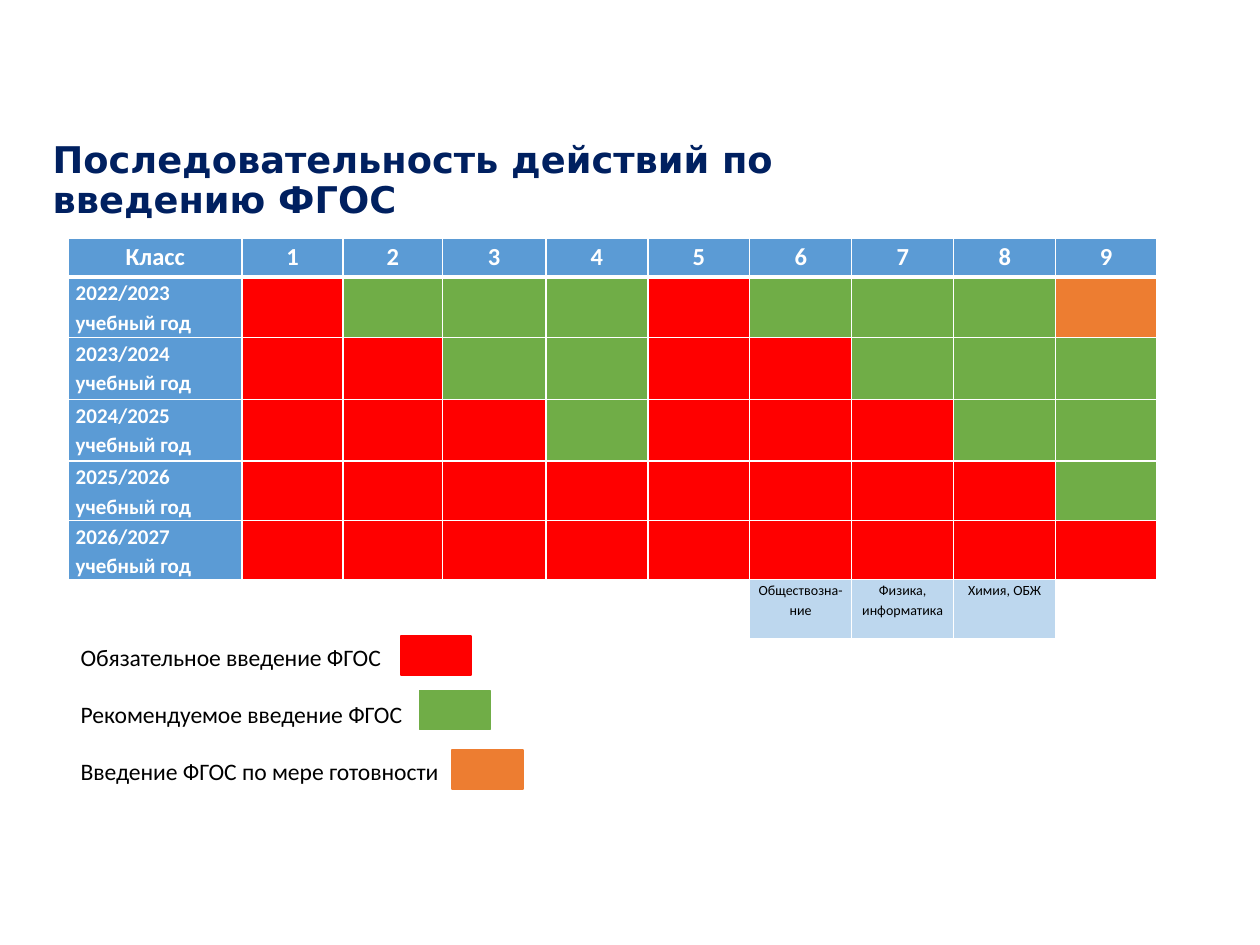
from dataclasses import dataclass

from lxml import etree
from pptx import Presentation
from pptx.dml.color import RGBColor
from pptx.enum import shapes, text
from pptx.oxml.ns import qn
from pptx.util import Pt

NAVY = RGBColor(0x00, 0x20, 0x60)
BLUE = RGBColor(0x5B, 0x9B, 0xD5)
PALE = RGBColor(0xBD, 0xD7, 0xEE)
RED = RGBColor(0xFF, 0x00, 0x00)
GREEN = RGBColor(0x70, 0xAD, 0x47)
ORANGE = RGBColor(0xED, 0x7D, 0x31)
WHITE = RGBColor(0xFF, 0xFF, 0xFF)
BLACK = RGBColor(0x00, 0x00, 0x00)

TITLE_FONT = dict(name="DejaVu Sans", size=Pt(21), bold=True)
HEAD_FONT = dict(name="Calibri", size=Pt(14), bold=True)
YEAR_FONT = dict(name="Calibri", size=Pt(12), bold=True)
NOTE_FONT = dict(name="Calibri", size=Pt(8), bold=False)
LEGEND_FONT = dict(name="Calibri", size=Pt(13.5), bold=False)

STAGES = {"R": RED, "G": GREEN, "O": ORANGE}
COLS = [99.4, 57.6, 56.9, 59] + [58.3] * 5 + [57.6]
ROWS = [22.3, 34.6, 35.3, 35.3, 33.85, 33.85, 33.85]
CENTER, LEFT = text.PP_ALIGN.CENTER, text.PP_ALIGN.LEFT


@dataclass
class Year:
    label: str
    stages: str


@dataclass
class Legend:
    label: str
    color: RGBColor
    x: float
    y: float


YEARS = [
    Year("2022/2023 учебный год", "RGGGRGGGO"),
    Year("2023/2024 учебный год", "RRGGRRGGG"),
    Year("2024/2025 учебный год", "RRRGRRRGG"),
    Year("2025/2026 учебный год", "RRRRRRRRG"),
    Year("2026/2027 учебный год", "RRRRRRRRR"),
]
SUBJECTS = {6: "Обществозна-ние", 7: "Физика, информатика", 8: "Химия, ОБЖ"}
LEGENDS = [
    Legend("Обязательное введение ФГОС", RED, 229, 363.6),
    Legend("Рекомендуемое введение ФГОС", GREEN, 239.8, 394.6),
    Legend("Введение ФГОС по мере готовности", ORANGE, 258.5, 428.4),
]


def write(p, label: str, fmt: dict, color: RGBColor) -> None:
    r = p.add_run()
    r.text = label
    for key, value in fmt.items():
        setattr(r.font, key, value)
    r.font.color.rgb = color


def add_text(s, x: float, y: float, w: float, h: float):
    tf = s.shapes.add_textbox(Pt(x), Pt(y), Pt(w), Pt(h)).text_frame
    tf.word_wrap = True
    return tf


def add_borders(cell, top: float, bottom: float) -> None:
    tc_pr = cell._tc.get_or_add_tcPr()
    for side, width in dict(lnL=1, lnR=1, lnT=top, lnB=bottom).items():
        ln = etree.SubElement(tc_pr, qn("a:" + side), w=str(Pt(width)))
        fill = etree.SubElement(ln, qn("a:solidFill"))
        etree.SubElement(fill, qn("a:srgbClr"), val=str(WHITE))


def paint(cell, color: RGBColor) -> None:
    cell.fill.solid()
    cell.fill.fore_color.rgb = color


def label_cell(cell, label: str, fmt: dict, fill: RGBColor, color: RGBColor, align) -> None:
    paint(cell, fill)
    margins = dict(margin_left=Pt(4.3), margin_right=Pt(4.3), margin_top=0, margin_bottom=0)
    for key, value in margins.items():
        setattr(cell, key, value)
    p = cell.text_frame.paragraphs[0]
    p.alignment, p.line_spacing = align, 1.15
    write(p, label, fmt, color)


def add_schedule(s) -> None:
    tbl = s.shapes.add_table(len(ROWS), len(COLS), Pt(39), Pt(136.1),
                             Pt(sum(COLS)), Pt(sum(ROWS))).table
    tbl.first_row = tbl.horz_banding = False
    for col, width in zip(tbl.columns, COLS):
        col.width = Pt(width)
    for i, (row, height) in enumerate(zip(tbl.rows, ROWS)):
        row.height = Pt(height)
        for cell in row.cells:
            add_borders(cell, 3 if i == 1 else 1, 3 if i == 0 else 1)
            cell.fill.background()
    for j in range(len(COLS)):
        label_cell(tbl.cell(0, j), str(j or "Класс"), HEAD_FONT, BLUE, WHITE, CENTER)
    for i, year in enumerate(YEARS, 1):
        label_cell(tbl.cell(i, 0), year.label, YEAR_FONT, BLUE, WHITE, LEFT)
        for j, stage in enumerate(year.stages, 1):
            paint(tbl.cell(i, j), STAGES[stage])
    last = len(ROWS) - 1
    for j in range(5):
        paint(tbl.cell(last, j), WHITE)
    for j, subject in SUBJECTS.items():
        label_cell(tbl.cell(last, j), subject, NOTE_FONT, PALE, BLACK, CENTER)


def add_legend(s) -> None:
    tf = add_text(s, 39, 363.6, 360, 89.3)
    for i, item in enumerate(LEGENDS):
        p = tf.add_paragraph() if i else tf.paragraphs[0]
        p.space_before = Pt(16.4 if i else 0)
        write(p, item.label, LEGEND_FONT, BLACK)
        sp = s.shapes.add_shape(shapes.MSO_SHAPE.RECTANGLE, Pt(item.x), Pt(item.y),
                                Pt(40.3), Pt(22.3))
        sp.shadow.inherit = False
        sp.fill.solid()
        sp.fill.fore_color.rgb = item.color
        sp.line.color.rgb = item.color
        sp.line.width = Pt(1)


def main() -> None:
    prs = Presentation()
    prs.slide_width, prs.slide_height = Pt(720), Pt(540)
    s = prs.slides.add_slide(prs.slide_layouts[6])
    tf = add_text(s, 23, 89.3, 545.8, 28.8)
    tf.vertical_anchor = text.MSO_ANCHOR.MIDDLE
    p = tf.paragraphs[0]
    p.line_spacing = 0.9
    write(p, "Последовательность действий по введению ФГОС", TITLE_FONT, NAVY)
    add_schedule(s)
    add_legend(s)
    prs.save("out.pptx")


if __name__ == "__main__":
    main()
